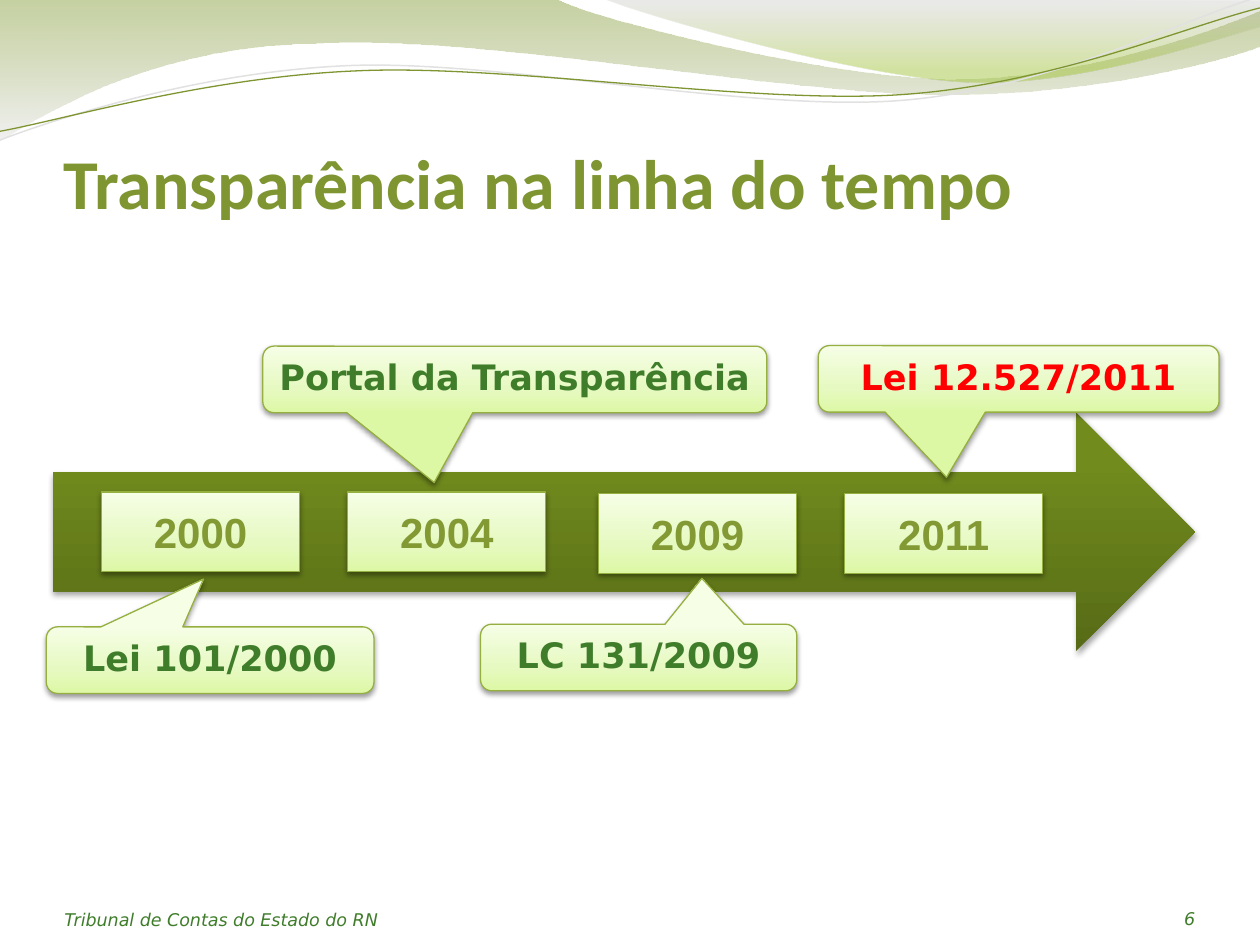
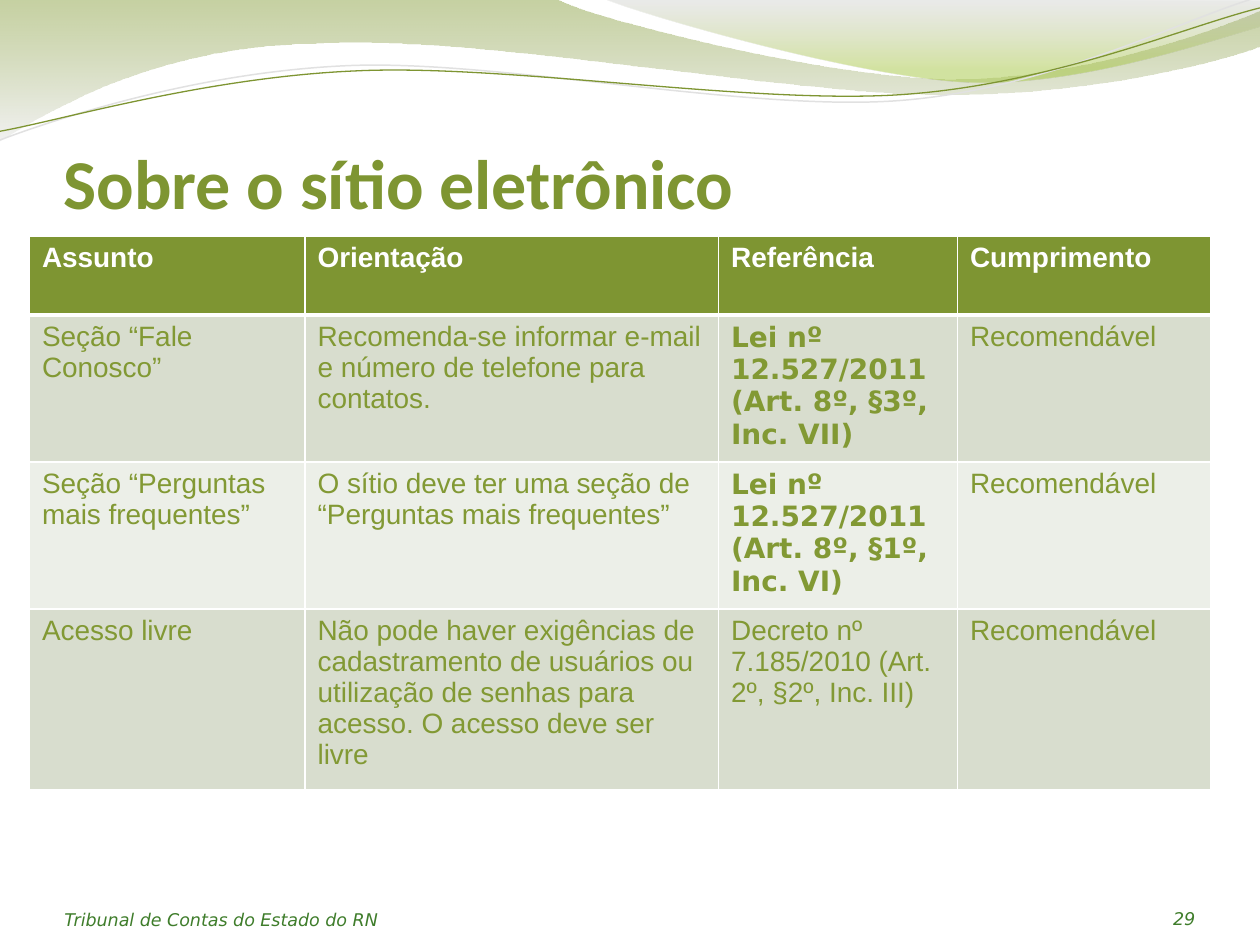
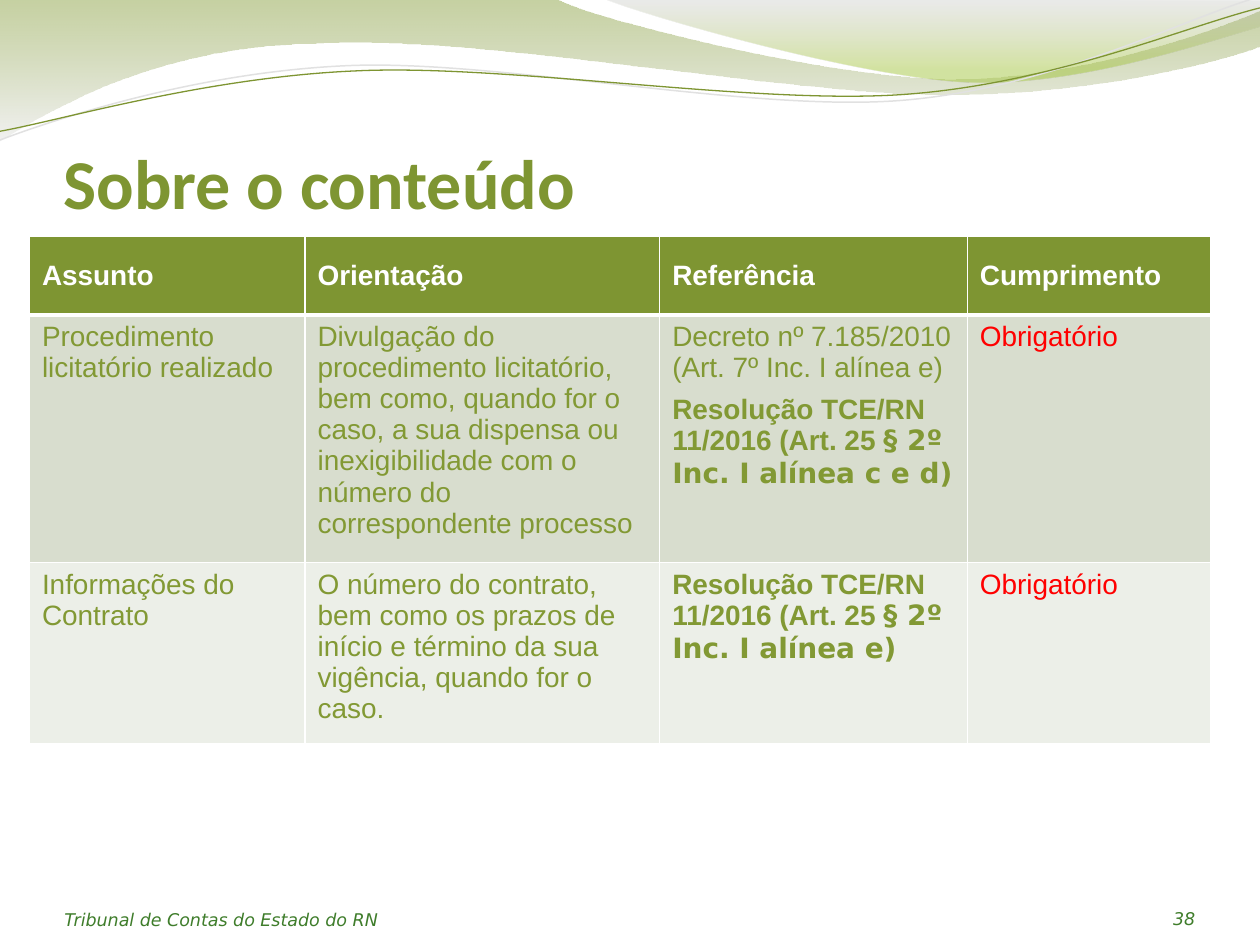
from lxml.etree import SubElement
from pptx import Presentation
from pptx.dml.color import RGBColor
from pptx.enum.shapes import MSO_SHAPE as Preset
from pptx.enum.text import MSO_ANCHOR as Anchor, PP_ALIGN as Align
from pptx.oxml.ns import qn
from pptx.util import Pt

# Colours and fonts
WHITE = RGBColor(0xFF, 0xFF, 0xFF)
BLACK = RGBColor(0x00, 0x00, 0x00)
RED = RGBColor(0xFF, 0x00, 0x00)
OLIVE = RGBColor(0x7E, 0x95, 0x32)
TEXT_OLIVE = RGBColor(0x82, 0x99, 0x34)
DARK_GREEN = RGBColor(0x3F, 0x7D, 0x2B)
OUTLINE_GREEN = RGBColor(0x95, 0xAF, 0x41)
PALE_LINE = RGBColor(0xE1, 0xE1, 0xE1)
ROW_FILLS = (RGBColor(0xD8, 0xDD, 0xCE), RGBColor(0xEC, 0xEF, 0xE8))
HEADING, BODY, ACCENT = "Calibri", "Arial", "DejaVu Sans"

# Gradients: (position %, colour, opacity %)
LEFT_WAVE = [(0, RGBColor(0x80, 0x99, 0x30), 45), (100, RGBColor(0xE7, 0xE7, 0xE7), 55)]
RIGHT_WAVE = [(0, RGBColor(0xBD, 0xBD, 0xBD), 30), (80, RGBColor(0x9E, 0xC1, 0x2F), 45)]
ARROW_GREEN = [(0, RGBColor(0x57, 0x6B, 0x16), 100), (80, RGBColor(0x71, 0x8B, 0x1D), 100),
               (100, RGBColor(0x73, 0x8D, 0x1B), 100)]
LIGHT_GREEN = [(0, RGBColor(0xDD, 0xF8, 0xA5), 100), (35, RGBColor(0xE6, 0xF9, 0xC1), 100),
               (100, RGBColor(0xF6, 0xFE, 0xE6), 100)]
UPWARD, DOWNWARD = 90, 270

# Header waves: start point, then lines (one point) and curves (three points)
BANDS = [
    (LEFT_WAVE, (0, -1), [
        [(317, -1)], [(343, 12), (478, 45), (546, 45)], [(614, 45), (690, 19), (720, 6)],
        [(721, 26)], [(708, 32), (626, 55), (537, 54)], [(448, 54), (275, 20), (185, 24.5)],
        [(93, 25), (33, 60), (-1, 81)]]),
    (RIGHT_WAVE, (345, -1), [
        [(366, 8), (491, 44.5), (554, 47)], [(616, 49.5), (692, 23), (720, 15)], [(720, 0)]]),
]
STRANDS = [
    (PALE_LINE, 0.85, (0, 80), [
        [(34.5, 67), (114, 41), (199.5, 37.5)], [(284.5, 34), (427, 64), (513.5, 57.5)],
        [(600, 51), (675.5, 11), (718.5, -1.5)]]),
    (OLIVE, 0.75, (0, 75), [
        [(34, 69), (118, 44), (204, 40.5)], [(290, 36.5), (430, 60), (516, 54)],
        [(602, 48), (677.5, 15), (720, 4.5)]]),
]

# Slide content
FOOTER = "Tribunal de Contas do Estado do RN"
HEADERS = ["Assunto", "Orientação", "Referência", "Cumprimento"]
REFERENCE, COMPLIANCE = 2, 3
ROW_HEIGHT = 45

YEARS = [("2000", 58, 281.2), ("2004", 198.7, 281.2), ("2009", 342, 282.2), ("2011", 482.7, 282.2)]
# Callouts: text, colour, left, top, width, pointer x, pointer y
CALLOUTS = [
    ("LC 131/2009", DARK_GREEN, 274.6, 356.7, 180.7, 0.2, -1.19),
    ("Lei 12.527/2011", RED, 467.6, 197.5, 229, -0.18, 1.48),
    ("Portal da Transparência", DARK_GREEN, 150.2, 197.8, 288, -0.16, 1.55),
    ("Lei 101/2000", DARK_GREEN, 26.5, 358.2, 187.2, -0.02, -1.22),
]

# A cell is a string or a list of paragraphs made of (text, font, bold) runs
RESOLUTION = ("Resolução TCE/RN 11/2016 (Art. 25 ", BODY, True)
WEBSITE_TABLE = {
    "widths": [157.5, 236.3, 136.5, 144.7], "anchor": Anchor.TOP,
    "gap": 0, "compliance": TEXT_OLIVE,
    "rows": [
        ["Seção “Fale Conosco”",
         "Recomenda-se informar e-mail e número de telefone para contatos.",
         [[("Lei nº 12.527/2011 (Art. 8º, §3º, Inc. VII)", ACCENT, True)]],
         "Recomendável"],
        ["Seção “Perguntas mais frequentes”",
         "O sítio deve ter uma seção de “Perguntas mais frequentes”",
         [[("Lei nº 12.527/2011 (Art. 8º, §1º, Inc. VI)", ACCENT, True)]],
         "Recomendável"],
        ["Acesso livre",
         "Não pode haver exigências de cadastramento de usuários ou utilização de senhas "
         "para acesso. O acesso deve ser livre",
         "Decreto nº 7.185/2010 (Art. 2º, §2º, Inc. III)",
         "Recomendável"],
    ],
}
CONTENT_TABLE = {
    "widths": [157.5, 202.7, 175.8, 139], "anchor": Anchor.MIDDLE,
    "gap": 6, "compliance": RED,
    "rows": [
        ["Procedimento licitatório realizado",
         "Divulgação do procedimento licitatório, bem como, quando for o caso, a sua dispensa "
         "ou inexigibilidade com o número do correspondente processo",
         [[("Decreto nº 7.185/2010 (Art. 7º Inc. I alínea e)", BODY, False)],
          [RESOLUTION, ("§ 2º Inc. I alínea c e d)", ACCENT, True)]],
         "Obrigatório"],
        ["Informações do Contrato",
         "O número do contrato, bem como os prazos de início e término da sua vigência, "
         "quando for o caso.",
         [[RESOLUTION, ("§ 2º Inc. I alínea e)", ACCENT, True)]],
         "Obrigatório"],
    ],
}
SLIDES = [
    ("Transparência na linha do tempo", "6", None),
    ("Sobre o sítio eletrônico", "29", WEBSITE_TABLE),
    ("Sobre o conteúdo", "38", CONTENT_TABLE),
]


# Formatting helpers
def style_font(font, name, size, color, bold=False, italic=False):
    font.name, font.size, font.bold, font.italic = name, Pt(size), bold, italic
    font.color.rgb = color


def add_color(parent, color, opacity):
    element = SubElement(parent, qn("a:srgbClr"), val=str(color))
    if opacity < 100:
        SubElement(element, qn("a:alpha"), val=str(opacity * 1000))


def fill_gradient(shape, stops, angle):
    shape.fill.gradient()
    shape.fill.gradient_angle = angle
    stop_list = shape._element.spPr.find(qn("a:gradFill")).find(qn("a:gsLst"))
    for stop in list(stop_list):
        stop_list.remove(stop)
    for position, color, opacity in stops:
        add_color(SubElement(stop_list, qn("a:gs"), pos=str(position * 1000)), color, opacity)


def add_shadow(shape, opacity, distance):
    effects = shape._element.spPr.find(qn("a:effectLst"))
    shadow = SubElement(effects, qn("a:outerShdw"), blurRad=str(Pt(3.1)), dist=str(Pt(distance)),
                        dir="5400000", rotWithShape="0")
    add_color(shadow, BLACK, opacity)


def add_text(slide, text, box, align=Align.LEFT, top_inset=0, **font):
    shape = slide.shapes.add_textbox(*map(Pt, box))
    frame = shape.text_frame
    frame.word_wrap = True
    frame.vertical_anchor = Anchor.BOTTOM
    frame.margin_left = frame.margin_right = frame.margin_bottom = 0
    frame.margin_top = Pt(top_inset)
    frame.text = text
    frame.paragraphs[0].alignment = align
    style_font(frame.paragraphs[0].runs[0].font, **font)


# Shared frame: waves, title, footer
def add_outline(slide, start, segments, close):
    points = [(Pt(x), Pt(y)) for segment in segments for x, y in segment]
    builder = slide.shapes.build_freeform(*map(Pt, start))
    builder.add_line_segments(points, close=close)
    shape = builder.convert_to_shape()
    shape.shadow.inherit = False
    # Join each group of three points into one Bézier curve
    outline = next(shape._element.iter(qn("a:path")))
    lines = iter(outline.findall(qn("a:lnTo")))
    for segment in segments:
        first, *others = [next(lines) for _ in segment]
        if others:
            first.tag = qn("a:cubicBezTo")
            for line in others:
                first.append(line[0])
                outline.remove(line)
    return shape


def add_frame(slide, title, number):
    for stops, start, segments in BANDS:
        band = add_outline(slide, start, segments, close=True)
        fill_gradient(band, stops, DOWNWARD)
        band.line.fill.background()
    for color, width, start, segments in STRANDS:
        strand = add_outline(slide, start, segments, close=False)
        strand.fill.background()
        strand.line.color.rgb = color
        strand.line.width = Pt(width)
    add_text(slide, title, (36.3, 37.5, 648, 90), top_inset=3.6,
             name=HEADING, size=40, color=OLIVE, bold=True)
    small = dict(name=ACCENT, size=10, color=DARK_GREEN, italic=True)
    add_text(slide, FOOTER, (36.8, 502.9, 264.3, 28.8), **small)
    add_text(slide, number, (623.2, 502.2, 59.8, 28.8), align=Align.RIGHT, **small)


# Timeline
def add_label(slide, preset, text, box, anchor, **font):
    shape = slide.shapes.add_shape(preset, *map(Pt, box))
    fill_gradient(shape, LIGHT_GREEN, UPWARD)
    shape.line.color.rgb = OUTLINE_GREEN
    shape.line.width = Pt(0.75)
    shape.shadow.inherit = False
    add_shadow(shape, 38, 1.6)
    frame = shape.text_frame
    frame.word_wrap = True
    frame.vertical_anchor = anchor
    frame.text = text
    frame.paragraphs[0].alignment = Align.CENTER
    style_font(frame.paragraphs[0].runs[0].font, bold=True, **font)
    return shape


def add_timeline(slide):
    arrow = slide.shapes.add_shape(Preset.RIGHT_ARROW, Pt(30.2), Pt(236), Pt(652.8), Pt(136))
    fill_gradient(arrow, ARROW_GREEN, UPWARD)
    arrow.line.fill.background()
    arrow.shadow.inherit = False
    add_shadow(arrow, 35, 1.8)
    for year, left, top in YEARS:
        add_label(slide, Preset.RECTANGLE, year, (left, top, 113.2, 45.4), Anchor.MIDDLE,
                  name=BODY, size=24, color=TEXT_OLIVE)
    for text, color, left, top, width, pointer_x, pointer_y in CALLOUTS:
        callout = add_label(slide, Preset.ROUNDED_RECTANGULAR_CALLOUT, text,
                            (left, top, width, 38), Anchor.TOP, name=ACCENT, size=20, color=color)
        callout.adjustments[0] = pointer_x
        callout.adjustments[1] = pointer_y


# Tables
def set_borders(cell, top, bottom):
    properties = cell._tc.get_or_add_tcPr()
    widths = {"a:lnL": 1, "a:lnR": 1, "a:lnT": top, "a:lnB": bottom}
    for index, (tag, width) in enumerate(widths.items()):
        line = SubElement(properties, qn(tag), w=str(Pt(width)))
        add_color(SubElement(line, qn("a:solidFill")), WHITE, 100)
        properties.insert(index, line)


def fill_cell(cell, content, color, bold, gap):
    paragraphs = [[(content, BODY, bold)]] if isinstance(content, str) else content
    frame = cell.text_frame
    for index, runs in enumerate(paragraphs):
        paragraph = frame.add_paragraph() if index else frame.paragraphs[0]
        if gap:
            paragraph.space_after = Pt(gap)
        for text, font, is_bold in runs:
            run = paragraph.add_run()
            run.text = text
            style_font(run.font, font, 16, color, is_bold)


def add_guidance_table(slide, data):
    rows = [HEADERS, *data["rows"]]
    widths = data["widths"]
    table = slide.shapes.add_table(len(rows), len(widths), Pt(16.8), Pt(135), Pt(sum(widths)),
                                   Pt(ROW_HEIGHT * len(rows))).table
    for column, width in zip(table.columns, widths):
        column.width = Pt(width)
    for r, row in enumerate(rows):
        is_header = r == 0
        for c, content in enumerate(row):
            cell = table.cell(r, c)
            cell.fill.solid()
            cell.fill.fore_color.rgb = OLIVE if is_header else ROW_FILLS[(r - 1) % 2]
            cell.vertical_anchor = data["anchor"] if is_header else Anchor.TOP
            set_borders(cell, top=3 if r == 1 else 1, bottom=3 if is_header else 1)
            color = WHITE if is_header else data["compliance"] if c == COMPLIANCE else TEXT_OLIVE
            gap = data["gap"] if c == REFERENCE and not is_header else 0
            fill_cell(cell, content, color, is_header, gap)


def main():
    presentation = Presentation()
    presentation.slide_width, presentation.slide_height = Pt(720), Pt(540)
    for title, number, table in SLIDES:
        slide = presentation.slides.add_slide(presentation.slide_layouts[6])
        add_frame(slide, title, number)
        if table:
            add_guidance_table(slide, table)
        else:
            add_timeline(slide)
    presentation.save("out.pptx")


if __name__ == "__main__":
    main()
